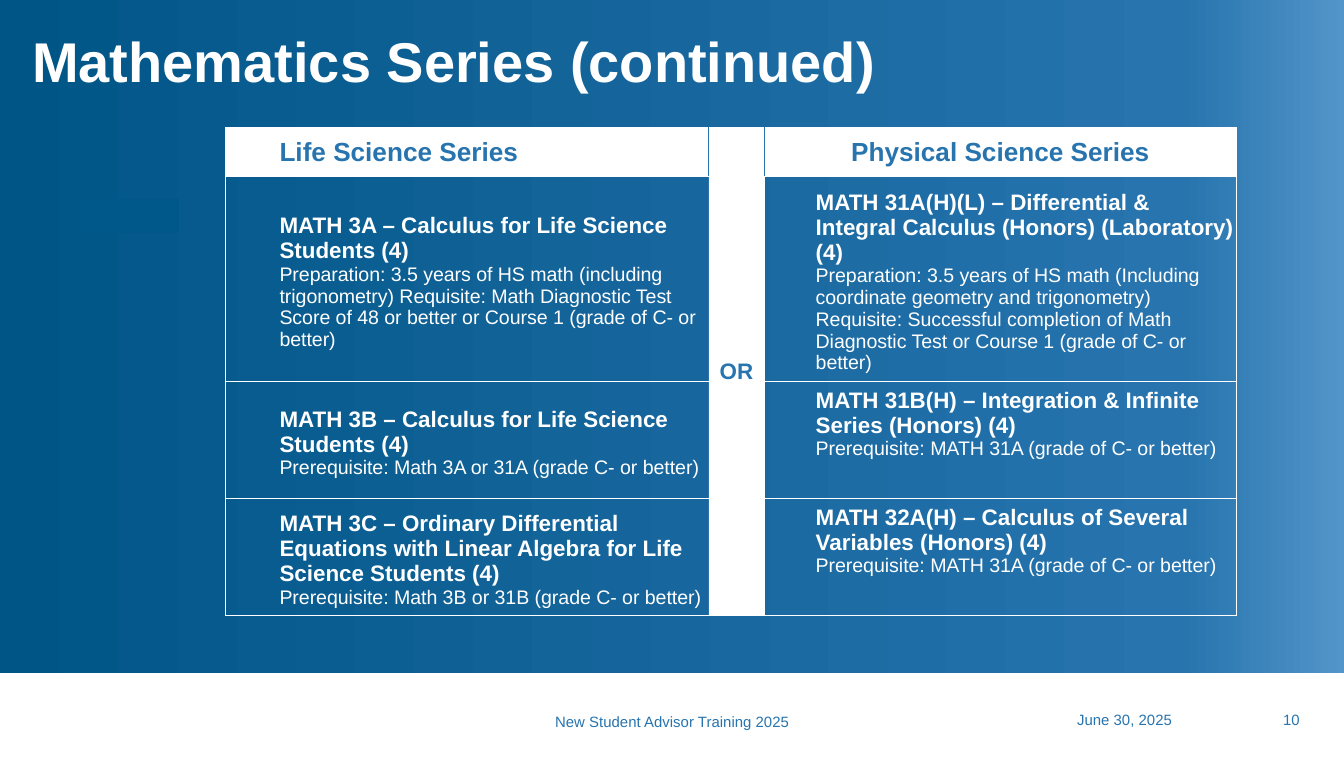
from copy import deepcopy
from pptx import Presentation
from pptx.dml.color import RGBColor
from pptx.enum.shapes import MSO_SHAPE
from pptx.enum.text import MSO_ANCHOR, PP_ALIGN
from pptx.oxml import parse_xml
from pptx.oxml.ns import nsdecls, qn
from pptx.util import Inches, Pt

HUES = {"white": "FFFFFF", "blue": "2774AE", "deep": "005587",
        "light": "5295C9", "patch": "00578A"}
HEAD = {"size": Pt(14), "bold": True}
COURSE = {"size": Pt(12), "bold": True}
DETAIL = {"size": Pt(10.5), "bold": False}
SMALL = {"size": Pt(8), "bold": False}

LIFE = [
    ["MATH 3A – Calculus for Life Science Students (4)",
     "Preparation: 3.5 years of HS math (including trigonometry) Requisite: "
     "Math Diagnostic Test Score of 48 or better or Course 1 (grade of C- or better)"],
    ["MATH 3B – Calculus for Life Science Students (4)",
     "Prerequisite: Math 3A or 31A (grade C- or better)"],
    ["MATH 3C – Ordinary Differential Equations with Linear Algebra for Life "
     "Science Students (4)",
     "Prerequisite: Math 3B or 31B (grade C- or better)"],
]
PHYSICAL = [
    ["MATH 31A(H)(L) – Differential & Integral Calculus (Honors) (Laboratory) (4)",
     "Preparation: 3.5 years of HS math (Including coordinate geometry and trigonometry)",
     "Requisite: Successful completion of Math Diagnostic Test or Course 1 "
     "(grade of C- or better)"],
    ["MATH 31B(H) – Integration & Infinite Series (Honors) (4)",
     "Prerequisite: MATH 31A (grade of C- or better)"],
    ["MATH 32A(H) – Calculus of Several Variables (Honors) (4)",
     "Prerequisite: MATH 31A (grade of C- or better)"],
]


def rgb(name):
    return RGBColor.from_string(HUES[name])


class Deck:
    def __init__(self):
        self.prs = Presentation()
        self.prs.slide_width, self.prs.slide_height = Inches(10), Inches(5.63)
        self.slide = self.prs.slides.add_slide(self.prs.slide_layouts[5])

    def style(self, para, look, hue, align=PP_ALIGN.LEFT):
        para.alignment = align
        para.font.name = "Arial"
        para.font.color.rgb = rgb(hue)
        for key, value in look.items():
            setattr(para.font, key, value)

    def inset(self, item, sides):
        """Set left, top, right and bottom margins of a frame or cell."""
        for side, size in zip(("left", "top", "right", "bottom"), sides):
            setattr(item, "margin_" + side, Inches(size))

    def backdrop(self, stops):
        fill = self.slide.background.fill
        fill.gradient()
        fill.gradient_angle = 0
        holder = self.slide.element.find(".//" + qn("a:gsLst"))
        holder.append(deepcopy(holder[0]))
        for stop, (place, hue) in zip(fill.gradient_stops, stops):
            stop.position = place
            stop.color.rgb = rgb(hue)

    def title(self, text, *box):
        shape = self.slide.shapes.title
        shape.left, shape.top, shape.width, shape.height = map(Inches, box)
        frame = shape.text_frame
        frame.text = text
        frame.vertical_anchor = MSO_ANCHOR.TOP
        frame.word_wrap = True
        self.inset(frame, (0.1, 0.05, 0.1, 0.05))
        para = frame.paragraphs[0]
        para.line_spacing = 0.9
        self.style(para, {"size": Pt(30), "bold": True}, "white")

    def rect(self, hue, *box):
        shape = self.slide.shapes.add_shape(MSO_SHAPE.RECTANGLE, *map(Inches, box))
        shape.shadow.inherit = False
        shape.fill.solid()
        shape.fill.fore_color.rgb = rgb(hue)
        shape.line.color.rgb = rgb(hue)
        shape.line.width = Pt(0.5)

    def footer(self, text, left, top, width, pad, align):
        box = self.slide.shapes.add_textbox(*map(Inches, (left, top, width, 0.15)))
        frame = box.text_frame
        frame.word_wrap = True
        frame.vertical_anchor = MSO_ANCHOR.BOTTOM
        self.inset(frame, (pad, 0.01, 0.1, 0.01))
        frame.text = text
        self.style(frame.paragraphs[0], SMALL, "blue", align)

    def table(self, left, top, cols, rows):
        frame = self.slide.shapes.add_table(
            len(rows), len(cols), *map(Inches, (left, top, sum(cols), sum(rows))))
        grid = frame.table
        grid.first_row = grid.horz_banding = False
        for col, size in zip(grid.columns, cols):
            col.width = Inches(size)
        for row, size in zip(grid.rows, rows):
            row.height = Inches(size)
        return grid

    def border(self, cell, **sides):
        """Draw half-point cell edges; they must come before the fill."""
        props = cell._tc.get_or_add_tcPr()
        for spot, side in enumerate("LRTB"):
            hue = HUES[sides.get(side, "white")]
            props.insert(spot, parse_xml(
                f'<a:ln{side} {nsdecls("a")} w="6350"><a:solidFill>'
                f'<a:srgbClr val="{hue}"/></a:solidFill></a:ln{side}>'))

    def cell(self, cell, lines, looks, hue="white", fill=None, pads=(0, 0, 0, 0),
             align=PP_ALIGN.LEFT, anchor=MSO_ANCHOR.MIDDLE, indent=0):
        if fill:
            cell.fill.solid()
            cell.fill.fore_color.rgb = rgb(fill)
        else:
            cell.fill.background()
        self.inset(cell, pads)
        cell.vertical_anchor = anchor
        cell.text = "\n".join(lines)
        for spot, para in enumerate(cell.text_frame.paragraphs):
            if indent:
                props = para._p.get_or_add_pPr()
                props.set("marL", str(Inches(indent)))
                props.set("indent", "0")
            self.style(para, looks[min(spot, len(looks) - 1)], hue, align)


def main():
    deck = Deck()
    deck.backdrop([(0, "deep"), (0.88, "blue"), (1, "light")])
    deck.rect("white", 0, 5.01, 10, 0.62)
    deck.footer("New Student Advisor Training 2025", 4.13, 5.29, 1.95, 0, PP_ALIGN.LEFT)
    deck.footer("June 30, 2025", 7.32, 5.28, 1.5, 0.1, PP_ALIGN.RIGHT)
    deck.footer("10", 8.9, 5.28, 0.87, 0.1, PP_ALIGN.RIGHT)
    deck.title("Mathematics Series (continued)", 0.14, 0.2, 8, 0.56)

    grid = deck.table(1.68, 0.95, (3.59, 0.42, 3.51), (0.36, 1.42, 0.87, 0.87))
    label = {"hue": "blue", "fill": "white"}
    deck.cell(grid.cell(0, 0), ["Life Science Series"], [HEAD],
              pads=(0.4, 0, 0, 0), **label)
    deck.cell(grid.cell(0, 2), ["Physical Science Series"], [HEAD],
              align=PP_ALIGN.CENTER, **label)
    grid.cell(0, 1).merge(grid.cell(3, 1))
    deck.cell(grid.cell(0, 1), ["OR"], [COURSE], align=PP_ALIGN.CENTER, **label)

    looks = [COURSE, DETAIL]
    for row, (life, physical) in enumerate(zip(LIFE, PHYSICAL), 1):
        deck.cell(grid.cell(row, 0), life, looks, pads=(0.4, 0.05, 0, 0))
        deck.cell(grid.cell(row, 2), physical, looks, pads=(0, 0.05, 0, 0), indent=0.38,
                  anchor=MSO_ANCHOR.MIDDLE if row == 1 else MSO_ANCHOR.TOP)

    inner = [{"R": "blue"}, {"L": "blue", "R": "blue"}, {"L": "blue"}]
    for row in range(4):
        for col in range(3):
            deck.border(grid.cell(row, col), **(inner[col] if row == 0 else {}))

    deck.rect("patch", 0.6, 1.48, 0.73, 0.25)
    deck.prs.save("out.pptx")


if __name__ == "__main__":
    main()
